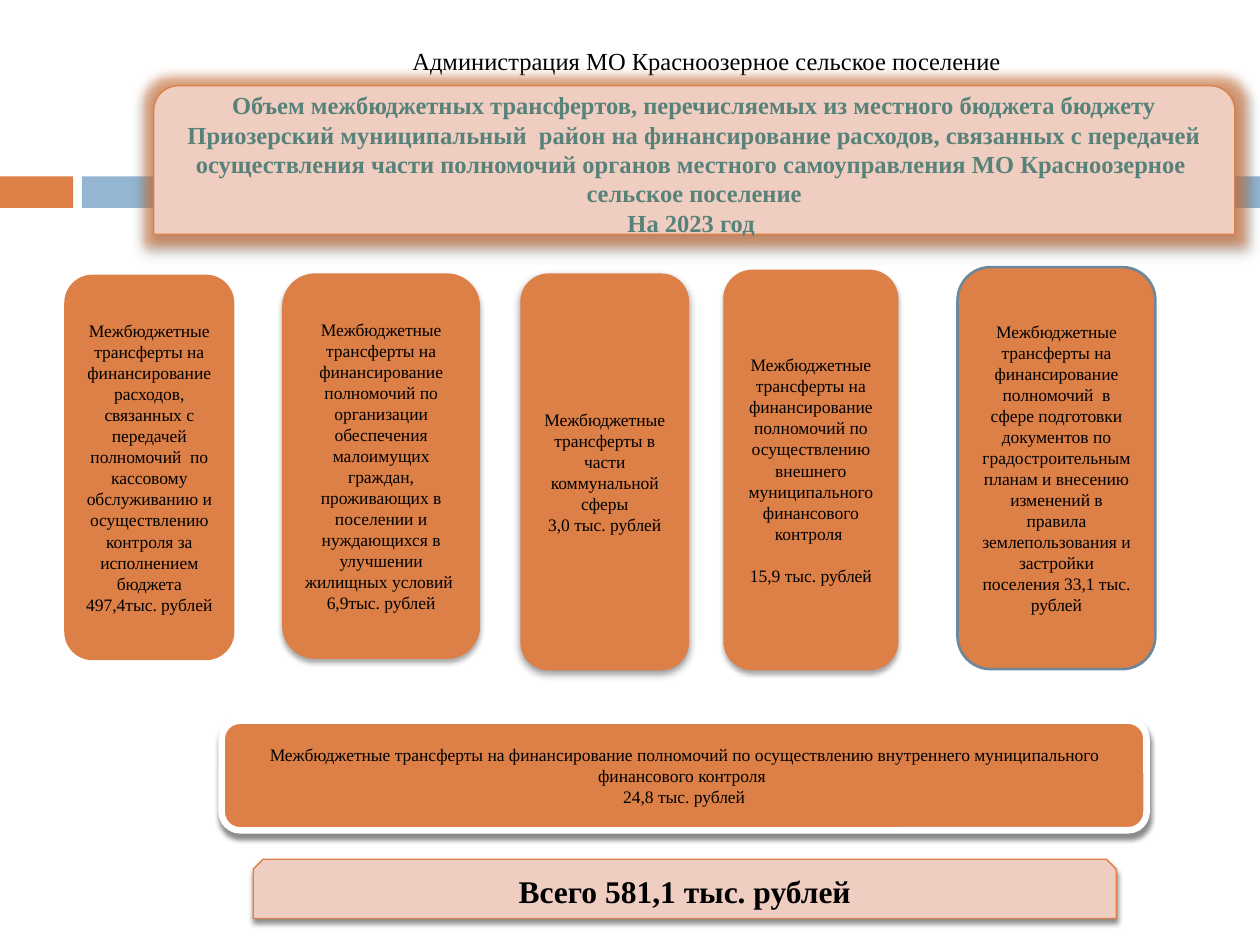
from lxml.etree import SubElement
from pptx import Presentation
from pptx.dml.color import RGBColor
from pptx.enum.shapes import MSO_SHAPE
from pptx.enum.text import MSO_ANCHOR, MSO_AUTO_SIZE, PP_ALIGN
from pptx.oxml.ns import qn
from pptx.util import Inches, Pt

ORANGE = RGBColor(0xDD, 0x80, 0x47)
BLUE = RGBColor(0x94, 0xB6, 0xD2)
PINK = RGBColor(0xEF, 0xCD, 0xC1)
SLATE = RGBColor(0x6D, 0x87, 0x9B)
GREEN = RGBColor(0x57, 0x82, 0x79)
WHITE = RGBColor(0xFF, 0xFF, 0xFF)
BLACK = RGBColor(0, 0, 0)
FONT = "Times New Roman"

# Opacity in percent, blur and distance in points
SOFT, MEDIUM, STRONG = (35, 3, 2), (45, 3, 2.4), (43, 5, 2)


def write(frame, text, size, color=BLACK, bold=False):
    frame.text = text
    frame.word_wrap = True
    frame.vertical_anchor = MSO_ANCHOR.MIDDLE
    for paragraph in frame.paragraphs:
        paragraph.alignment = PP_ALIGN.CENTER
        for run in paragraph.runs:
            run.font.name = FONT
            run.font.size = Pt(size)
            run.font.bold = bold
            run.font.color.rgb = color


def add_panel(kind, box, fill, line=None, line_width=0.79, shadow=None, glow=None):
    """Add a filled shape; shadow is (opacity, blur, distance), glow a radius in points."""
    panel = slide.shapes.add_shape(kind, *[Inches(length) for length in box])
    panel.fill.solid()
    panel.fill.fore_color.rgb = fill
    if line is None:
        panel.line.fill.background()
    else:
        panel.line.color.rgb = line
        panel.line.width = Pt(line_width)
    panel.shadow.inherit = False
    effects = panel._element.spPr.find(qn("a:effectLst"))
    if glow:
        halo = SubElement(effects, qn("a:glow"), rad=str(Pt(glow)))
        tint = SubElement(halo, qn("a:srgbClr"), val=str(ORANGE))
        SubElement(tint, qn("a:alpha"), val="60000")
    if shadow:
        opacity, blur, distance = shadow
        outer = SubElement(effects, qn("a:outerShdw"), blurRad=str(Pt(blur)),
                           dist=str(Pt(distance)), dir="5400000", rotWithShape="0")
        tint = SubElement(outer, qn("a:srgbClr"), val=str(BLACK))
        SubElement(tint, qn("a:alpha"), val=str(opacity * 1000))
    return panel


prs = Presentation()
prs.slide_width, prs.slide_height = Inches(10), Inches(7.5)
slide = prs.slides.add_slide(prs.slide_layouts[5])

# Title and the band behind the heading
title = slide.shapes.title
title.left, title.top = Inches(1.57), Inches(0.29)
title.width, title.height = Inches(8.08), Inches(0.39)
write(title.text_frame, "Администрация МО Красноозерное сельское поселение", 14)
title.text_frame.auto_size = MSO_AUTO_SIZE.NONE

add_panel(MSO_SHAPE.RECTANGLE, (0, 1.4, 0.58, 0.25), ORANGE)
add_panel(MSO_SHAPE.RECTANGLE, (0.65, 1.4, 9.35, 0.25), BLUE)

heading = add_panel(MSO_SHAPE.ROUND_2_SAME_RECTANGLE, (1.22, 0.68, 8.58, 1.18),
                    PINK, ORANGE, shadow=STRONG, glow=11)
write(heading.text_frame,
      "Объем межбюджетных трансфертов, перечисляемых из местного бюджета бюджету "
      "Приозерский муниципальный  район на финансирование расходов, связанных с "
      "передачей осуществления части полномочий органов местного самоуправления "
      "МО Красноозерное  сельское поселение\nНа 2023 год ", 14, GREEN, bold=True)

# Transfers by purpose: box, shadow, text
CARDS = [
    ((0.51, 2.18, 1.35, 3.06), None,
     "Межбюджетные трансферты на финансирование расходов, связанных с передачей "
     "полномочий  по кассовому обслуживанию и осуществлению контроля за "
     "исполнением бюджета\n497,4тыс. рублей"),
    ((2.24, 2.17, 1.57, 3.06), SOFT,
     "Межбюджетные трансферты на\nфинансирование полномочий по организации "
     "обеспечения малоимущих граждан, проживающих в поселении и нуждающихся в "
     "улучшении жилищных условий \n6,9тыс. рублей"),
    ((4.13, 2.17, 1.34, 3.15), STRONG,
     "Межбюджетные трансферты в части коммунальной сферы\n3,0 тыс. рублей"),
    ((5.74, 2.14, 1.39, 3.18), SOFT,
     "Межбюджетные трансферты на финансирование полномочий по осуществлению "
     "внешнего муниципального финансового контроля \n15,9 тыс. рублей"),
]
for box, shadow, text in CARDS:
    card = add_panel(MSO_SHAPE.FLOWCHART_ALTERNATE_PROCESS, box, ORANGE, shadow=shadow)
    write(card.text_frame, text, 10)
external_control = card
external_control.text_frame.paragraphs[-1].space_before = Pt(12)

# Total, internal control and town planning
total = add_panel(MSO_SHAPE.SNIP_2_SAME_RECTANGLE, (2.01, 6.82, 6.85, 0.47),
                  PINK, ORANGE, shadow=MEDIUM)
write(total.text_frame, "Всего 581,1 тыс. рублей", 18, bold=True)

internal_control = add_panel(MSO_SHAPE.ROUNDED_RECTANGLE, (1.76, 5.72, 7.34, 0.87),
                             ORANGE, WHITE, 3.75, shadow=MEDIUM)
write(internal_control.text_frame,
      "Межбюджетные трансферты на финансирование полномочий по осуществлению "
      "внутреннего муниципального финансового контроля \n24,8 тыс. рублей", 10)

town_planning = add_panel(MSO_SHAPE.ROUNDED_RECTANGLE, (7.6, 2.12, 1.57, 3.19),
                          ORANGE, SLATE, 1.5)
write(town_planning.text_frame,
      "Межбюджетные трансферты на финансирование полномочий  в сфере подготовки "
      "документов по градостроительным планам и внесению изменений в правила "
      "землепользования и застройки поселения 33,1 тыс. рублей", 10)

prs.save("out.pptx")
